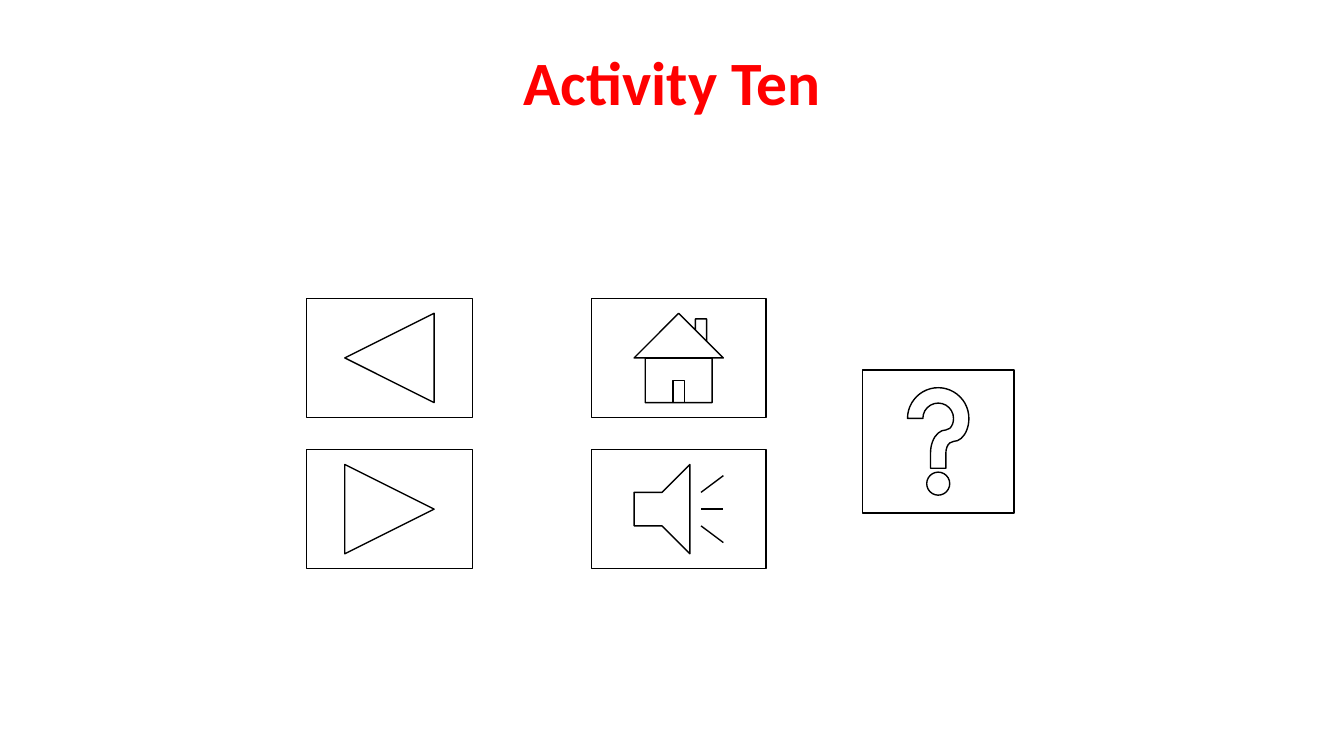
from pptx import Presentation
from pptx.dml.color import RGBColor
from pptx.enum.shapes import MSO_SHAPE
from pptx.enum.text import MSO_ANCHOR, MSO_AUTO_SIZE, PP_ALIGN
from pptx.util import Cm, Pt

RED = RGBColor(0xFF, 0x00, 0x00)
BLACK = RGBColor(0x00, 0x00, 0x00)

TITLE_BOX = {"left": Cm(5.51), "top": Cm(0.99), "width": Cm(22.86), "height": Cm(2.34)}
TITLE_FRAME = {
    "vertical_anchor": MSO_ANCHOR.MIDDLE,
    "word_wrap": True,
    "auto_size": MSO_AUTO_SIZE.NONE,
}
TITLE_PARAGRAPH = {"alignment": PP_ALIGN.CENTER, "line_spacing": 0.9}
TITLE_FONT = {"name": "Calibri", "size": Pt(44), "bold": True}

ROW_TOPS = (7.52, 11.33)
ROW_HEIGHT = 3
BUTTON_COLUMNS = (
    (7.72, 4.19, (MSO_SHAPE.ACTION_BUTTON_BACK_OR_PREVIOUS,
                  MSO_SHAPE.ACTION_BUTTON_FORWARD_OR_NEXT)),
    (14.91, 4.39, (MSO_SHAPE.ACTION_BUTTON_HOME, MSO_SHAPE.ACTION_BUTTON_SOUND)),
)


def apply_format(target, values):
    for name, value in values.items():
        setattr(target, name, value)


def set_title(slide, text):
    title = slide.shapes.title
    apply_format(title, TITLE_BOX)
    apply_format(title.text_frame, TITLE_FRAME)
    paragraph = title.text_frame.paragraphs[0]
    apply_format(paragraph, TITLE_PARAGRAPH)
    run = paragraph.add_run()
    run.text = text
    apply_format(run.font, TITLE_FONT)
    run.font.color.rgb = RED


def add_button(slide, kind, left, top, width, height):
    shape = slide.shapes.add_shape(kind, Cm(left), Cm(top), Cm(width), Cm(height))
    shape.shadow.inherit = False
    shape.fill.background()
    shape.line.color.rgb = BLACK
    shape.line.width = Pt(1)


def main():
    presentation = Presentation()
    presentation.slide_width = Cm(33.87)
    presentation.slide_height = Cm(19.05)
    slide = presentation.slides.add_slide(presentation.slide_layouts[5])
    set_title(slide, "Activity Ten")
    for left, width, kinds in BUTTON_COLUMNS:
        for top, kind in zip(ROW_TOPS, kinds):
            add_button(slide, kind, left, top, width, ROW_HEIGHT)
    add_button(slide, MSO_SHAPE.ACTION_BUTTON_HELP, 21.74, 9.32, 3.81, 3.61)
    presentation.save("out.pptx")


if __name__ == "__main__":
    main()
